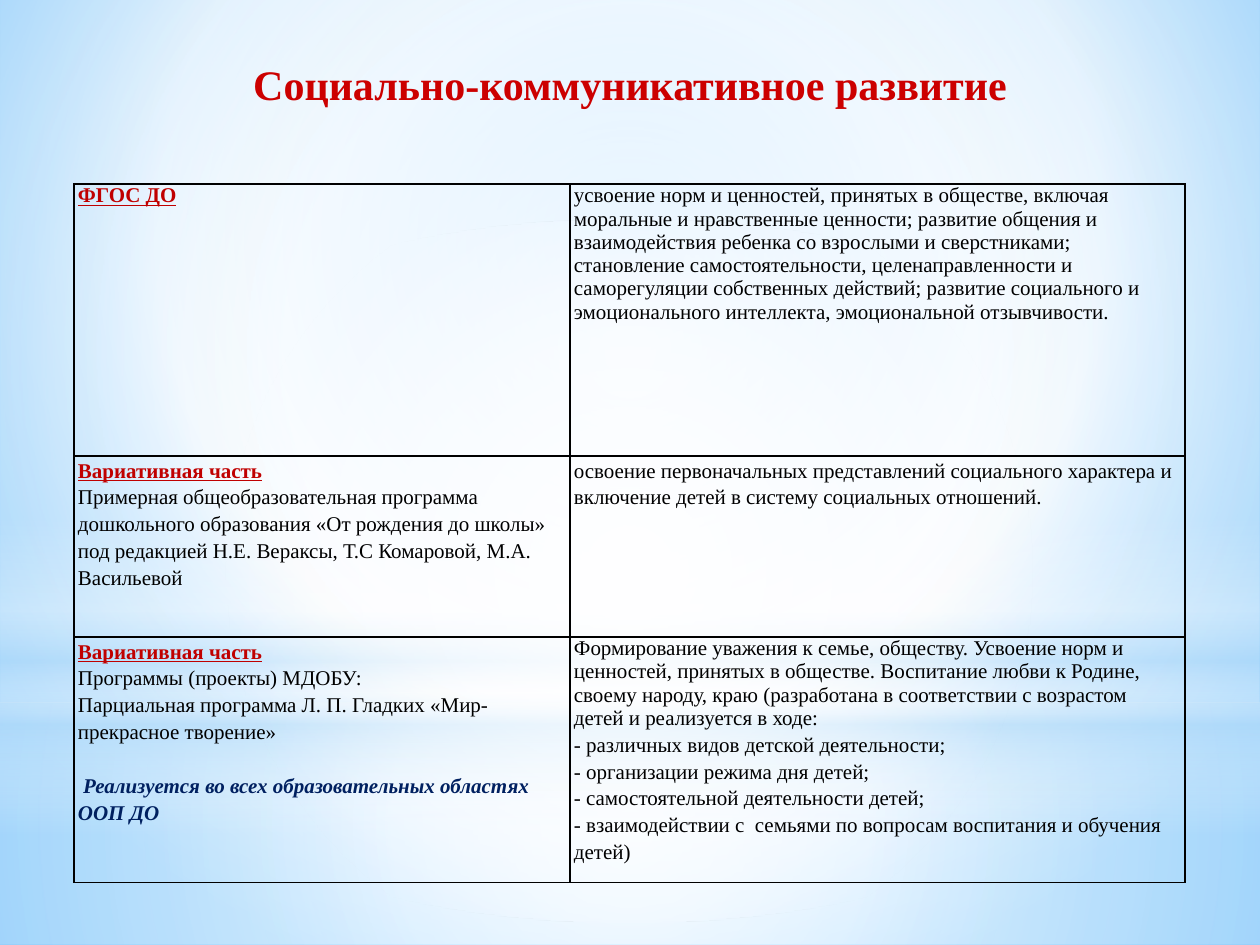
"""Build a slide on social and communicative development with a three-row table."""
from pptx import Presentation, util as u
from pptx.dml.color import RGBColor
from pptx.enum import shapes, text
from pptx.oxml import parse_xml
from pptx.oxml.ns import nsdecls, qn

PX = 914400 // 126
FONT = "Times New Roman"
BLACK, RED, NAVY = "000000", "C00000", "002060"
RECT, OVAL = shapes.MSO_SHAPE.RECTANGLE, shapes.MSO_SHAPE.OVAL
CENTER = (50, 50, 50, 50)

SKY = [(0, "9ED5FF", 100), (60, "FFFFFF", 100), (100, "5BB9FF", 100)]
SKY_FOCUS = (20, 10, 20, 60)
GLOWS = [
    (RECT, (0, 703, 1260, 242), CENTER,
     [(0, "FFFFFF", 91), (37, "FFFFFF", 76), (100, "B4DCFA", 79)]),
    (RECT, (0, 0, 1260, 703), CENTER,
     [(0, "FFFFFF", 89), (48, "FFFFFF", 62), (100, "B4DCFA", 79)]),
    (RECT, (0, 519, 1260, 315), None,
     [(0, "FFFFFF", 0), (29, "FFFFFF", 30), (45, "B4DCFA", 40),
      (55, "FFFFFF", 26), (65, "B4DCFA", 60), (100, "FFFFFF", 0)]),
    (OVAL, (0, 220, 1260, 703), CENTER, [(0, "FFFFFF", 100), (56, "FFFFFF", 0)]),
]

TITLE = "Социально-коммуникативное развитие"
TITLE_BOX = (74, 45, 1112, 534)
TABLE_AT = (74, 184)
COLUMNS = [496, 615]
ROWS = [272, 181, 242]

STYLES = {
    "plain": dict(color=BLACK),
    "heading": dict(color=RED, bold=True, underline=True),
    "note": dict(color=NAVY, bold=True, italic=True),
}
# Each paragraph: text, style, line spacing, space before in points
CELLS = [
    [
        [("ФГОС ДО", "heading", 1, 0)],
        [("усвоение норм и ценностей, принятых в обществе, включая моральные и "
          "нравственные ценности; развитие общения и взаимодействия ребенка со "
          "взрослыми и сверстниками; становление самостоятельности, "
          "целенаправленности и саморегуляции собственных действий; развитие "
          "социального и эмоционального интеллекта, эмоциональной отзывчивости.",
          "plain", 1, 0)],
    ],
    [
        [("Вариативная часть", "heading", 1.15, 0),
         ("Примерная общеобразовательная программа дошкольного образования "
          "«От рождения до школы» под редакцией Н.Е. Вераксы, Т.С Комаровой, "
          "М.А. Васильевой", "plain", 1.15, 0)],
        [("освоение первоначальных представлений социального характера и "
          "включение детей в систему социальных отношений.", "plain", 1.15, 0)],
    ],
    [
        [("Вариативная часть", "heading", 1.15, 0),
         ("Программы (проекты) МДОБУ:", "plain", 1.15, 0),
         ("Парциальная программа Л. П. Гладких «Мир-прекрасное творение»",
          "plain", 1.15, 0),
         (" Реализуется во всех образовательных областях ООП ДО",
          "note", 1.15, 15.5)],
        [("Формирование уважения к семье, обществу. Усвоение норм и ценностей, "
          "принятых в обществе. Воспитание любви к Родине, своему народу, краю "
          "(разработана в соответствии с возрастом детей и реализуется в ходе:",
          "plain", 1, 0),
         ("- различных видов детской деятельности;", "plain", 1.15, 0),
         ("- организации режима дня детей;", "plain", 1.15, 0),
         ("- самостоятельной деятельности детей;", "plain", 1.15, 0),
         ("- взаимодействии с  семьями по вопросам воспитания и обучения детей)",
          "plain", 1.15, 0)],
    ],
]


def emu(lengths):
    return [length * PX for length in lengths]


def rgb(color):
    return RGBColor.from_string(color)


def paint_gradient(fill, owner, stops, focus):
    fill.gradient()
    stop_xml = "".join(
        f'<a:gs pos="{pos * 1000}"><a:srgbClr val="{color}">'
        f'<a:alpha val="{opacity * 1000}"/></a:srgbClr></a:gs>'
        for pos, color, opacity in stops)
    if focus:
        edges = " ".join(f'{side}="{share * 1000}"' for side, share in zip("ltrb", focus))
        direction = f'<a:path path="circle"><a:fillToRect {edges}/></a:path>'
    else:
        direction = '<a:lin ang="5400000" scaled="0"/>'
    gradient = parse_xml(f'<a:gradFill {nsdecls("a")} rotWithShape="1">'
                         f'<a:gsLst>{stop_xml}</a:gsLst>{direction}</a:gradFill>')
    default = owner.find(".//" + qn("a:gradFill"))
    default.getparent().replace(default, gradient)


def add_run(paragraph, words, size, color, bold=False, italic=False, underline=False):
    run = paragraph.add_run()
    run.text = words
    font = run.font
    font.name, font.size = FONT, u.Pt(size)
    font.bold, font.italic, font.underline = bold, italic, underline
    font.color.rgb = rgb(color)


def add_borders(cell):
    properties = cell._tc.get_or_add_tcPr()
    for side in "LRTB":
        properties.append(parse_xml(
            f'<a:ln{side} {nsdecls("a")} w="12700"><a:solidFill>'
            f'<a:srgbClr val="{BLACK}"/></a:solidFill></a:ln{side}>'))


def fill_cell(cell, paragraphs):
    cell.margin_left = cell.margin_right = 4 * PX
    cell.margin_top = cell.margin_bottom = 0
    add_borders(cell)
    cell.fill.background()
    frame = cell.text_frame
    for index, (words, style, spacing, before) in enumerate(paragraphs):
        paragraph = frame.add_paragraph() if index else frame.paragraphs[0]
        paragraph.line_spacing = float(spacing)
        paragraph.space_before = u.Pt(before)
        add_run(paragraph, words, 12, **STYLES[style])


def add_background(slide):
    paint_gradient(slide.background.fill, slide.element, SKY, SKY_FOCUS)
    for kind, place, focus, stops in GLOWS:
        glow = slide.shapes.add_shape(kind, *emu(place))
        glow.shadow.inherit = False
        glow.line.fill.background()
        paint_gradient(glow.fill, glow.element, stops, focus)


def add_title(slide):
    frame = slide.shapes.add_textbox(*emu(TITLE_BOX)).text_frame
    frame.word_wrap = True
    frame.margin_top = 13 * PX
    heading = frame.paragraphs[0]
    heading.alignment = text.PP_ALIGN.CENTER
    add_run(heading, TITLE, 24, "CC0000", bold=True)


def add_programmes(slide):
    size = sum(COLUMNS), sum(ROWS)
    programmes = slide.shapes.add_table(
        len(ROWS), len(COLUMNS), *emu(TABLE_AT + size)).table
    programmes.first_row = programmes.horz_banding = False
    for column, width in zip(programmes.columns, emu(COLUMNS)):
        column.width = width
    for row, height, contents in zip(programmes.rows, emu(ROWS), CELLS):
        row.height = height
        for cell, paragraphs in zip(row.cells, contents):
            fill_cell(cell, paragraphs)


def main():
    deck = Presentation()
    deck.slide_width, deck.slide_height = emu((1260, 945))
    slide = deck.slides.add_slide(deck.slide_layouts[6])
    add_background(slide)
    add_title(slide)
    add_programmes(slide)
    deck.save("out.pptx")


if __name__ == "__main__":
    main()
